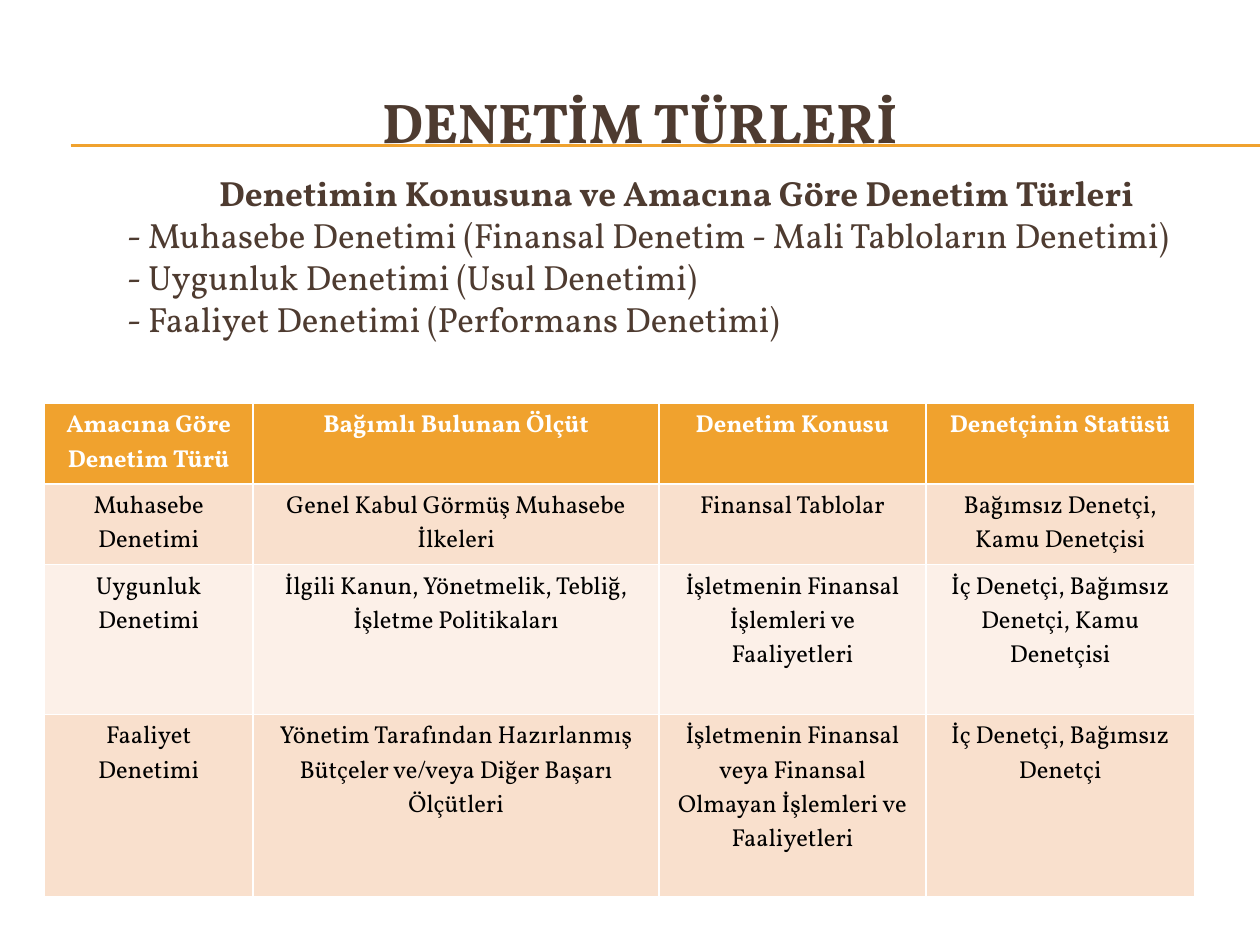
"""Build a slide on audit types with a title, a list and a table."""
from dataclasses import dataclass

from lxml import etree
from pptx import Presentation
from pptx.dml.color import RGBColor
from pptx.enum.shapes import MSO_CONNECTOR
from pptx.enum.text import MSO_ANCHOR, PP_ALIGN
from pptx.oxml.ns import qn
from pptx.util import Inches, Pt

LINE = MSO_CONNECTOR.STRAIGHT
MID, TOP = MSO_ANCHOR.MIDDLE, MSO_ANCHOR.TOP
CENTER, JUST = PP_ALIGN.CENTER, PP_ALIGN.JUSTIFY
FONT, BROWN, GOLD = "Vollkorn", "4E3B30", "F0A22E"
WHITE, BLACK = "FFFFFF", "000000"
BANDS = ("F9E0CD", "FCF0E8")


@dataclass
class Row:
    high: float
    texts: tuple[str, ...]


WIDTHS = (1.66, 3.22, 2.12, 2.13)
ROWS = (
    Row(0.64, ("Amacına Göre Denetim Türü", "Bağımlı Bulunan Ölçüt",
               "Denetim Konusu", "Denetçinin Statüsü")),
    Row(0.64, ("Muhasebe Denetimi", "Genel Kabul Görmüş Muhasebe İlkeleri",
               "Finansal Tablolar", "Bağımsız Denetçi, Kamu Denetçisi")),
    Row(1.19, ("Uygunluk Denetimi",
               "İlgili Kanun, Yönetmelik, Tebliğ, İşletme Politikaları",
               "İşletmenin Finansal İşlemleri ve Faaliyetleri",
               "İç Denetçi, Bağımsız Denetçi, Kamu Denetçisi")),
    Row(1.45, ("Faaliyet Denetimi",
               "Yönetim Tarafından Hazırlanmış Bütçeler ve/veya Diğer Başarı Ölçütleri",
               "İşletmenin Finansal veya Finansal Olmayan İşlemleri ve Faaliyetleri",
               "İç Denetçi, Bağımsız Denetçi")),
)
HEAD = "Denetimin Konusuna ve Amacına Göre Denetim Türleri"
ITEMS = (
    "- Muhasebe Denetimi (Finansal Denetim - Mali Tabloların Denetimi)",
    "- Uygunluk Denetimi (Usul Denetimi)",
    "- Faaliyet Denetimi (Performans Denetimi)",
)


def color(code: str) -> RGBColor:
    return RGBColor.from_string(code)


def write(para, text: str, *, size: int, ink: str = BROWN, bold: bool = False,
          align=CENTER, indent: float = 0) -> None:
    para.alignment = align
    if indent:
        props = para._p.get_or_add_pPr()
        props.set("marL", "0")
        props.set("indent", str(Inches(indent)))
    run = para.add_run()
    run.text = text
    font = run.font
    font.name, font.size, font.bold = FONT, Pt(size), bold
    font.color.rgb = color(ink)


def add_rule(slide, y: float) -> None:
    rule = slide.shapes.add_connector(
        LINE, Inches(0.56), Inches(y), Inches(10), Inches(y))
    rule.line.color.rgb = color(GOLD)
    rule.line.width = Pt(0.75)
    etree.SubElement(rule._element.spPr, qn("a:effectLst"))


def set_title(slide, text: str) -> None:
    title = slide.shapes.title
    title.left, title.top = Inches(0.33), Inches(0.5)
    title.width, title.height = Inches(9.5), Inches(0.92)
    title.text_frame.vertical_anchor = MID
    write(title.text_frame.paragraphs[0], text, size=32, bold=True)
    slide.shapes._spTree.append(title._element)


def add_list(slide) -> None:
    box = slide.shapes.add_textbox(
        Inches(0.33), Inches(1.31), Inches(9.5), Inches(1.75))
    frame = box.text_frame
    frame.word_wrap = True
    frame.vertical_anchor = TOP
    write(frame.paragraphs[0], HEAD, size=20, bold=True, indent=0.58)
    for item in ITEMS:
        write(frame.add_paragraph(), item, size=20, align=JUST, indent=0.58)


def add_grid(slide, rows: tuple[Row, ...]) -> None:
    high = sum(row.high for row in rows)
    table = slide.shapes.add_table(
        len(rows), len(WIDTHS), Inches(0.35), Inches(3.2),
        Inches(sum(WIDTHS)), Inches(high)).table
    for col, width in zip(table.columns, WIDTHS):
        col.width = Inches(width)
    for r, row in enumerate(rows):
        table.rows[r].height = Inches(row.high)
        top = r == 0
        for c, text in enumerate(row.texts):
            cell = table.cell(r, c)
            cell.fill.solid()
            cell.fill.fore_color.rgb = color(GOLD if top else BANDS[(r - 1) % 2])
            write(cell.text_frame.paragraphs[0], text, size=14,
                  ink=WHITE if top else BLACK, bold=top)


def main() -> None:
    deck = Presentation()
    deck.slide_width, deck.slide_height = Inches(10), Inches(7.5)
    slide = deck.slides.add_slide(deck.slide_layouts[5])
    for y in (1.15, 1.16):
        add_rule(slide, y)
    set_title(slide, "DENETİM TÜRLERİ")
    add_list(slide)
    add_grid(slide, ROWS)
    deck.save("out.pptx")


if __name__ == "__main__":
    main()
